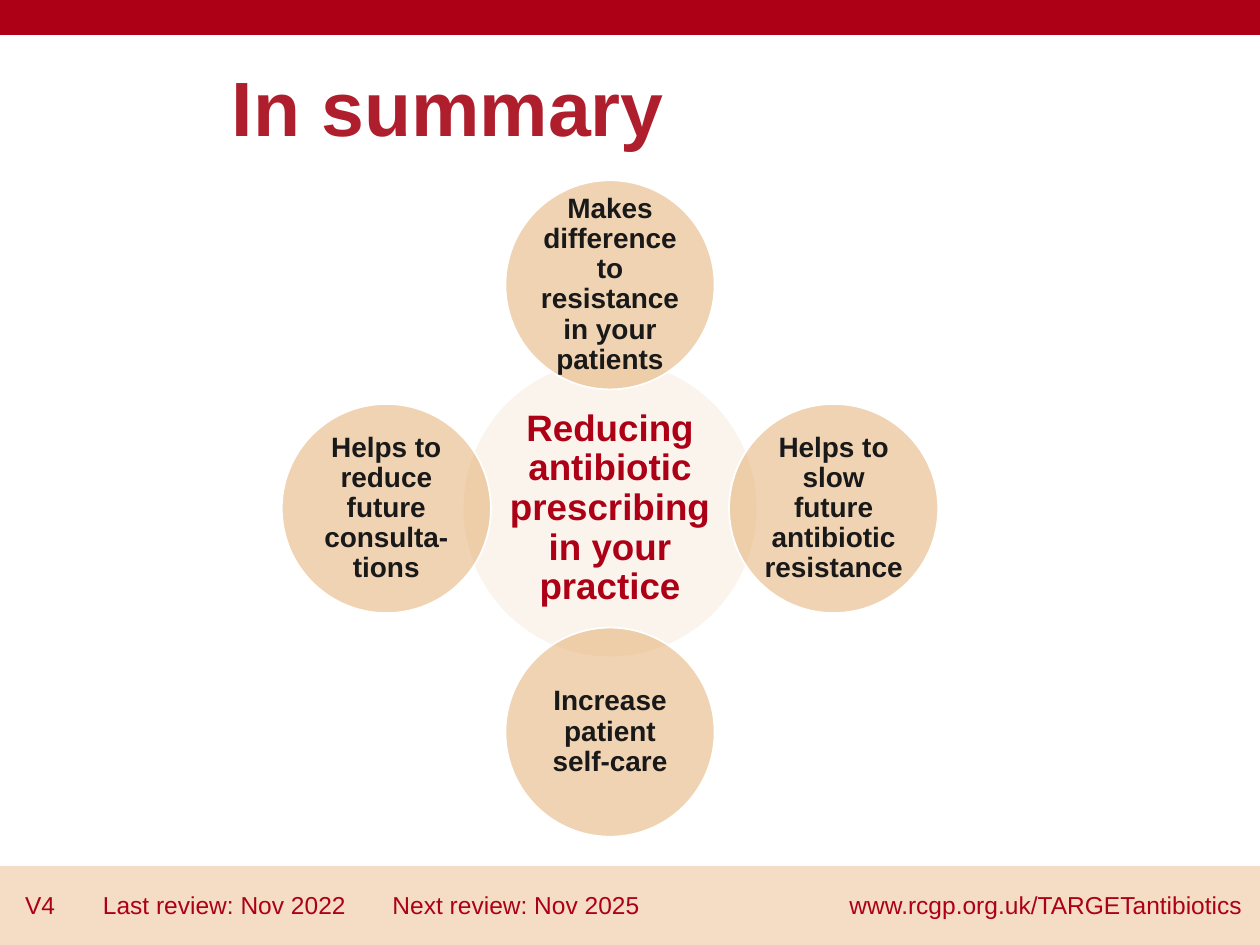
from dataclasses import dataclass

import pptx
import pptx.dml.color
import pptx.enum.shapes
import pptx.enum.text
import pptx.oxml.ns
import pptx.util
from lxml import etree

Pt = pptx.util.Pt
RGBColor = pptx.dml.color.RGBColor
Shape = pptx.enum.shapes.MSO_SHAPE
Align = pptx.enum.text.PP_ALIGN
Anchor = pptx.enum.text.MSO_ANCHOR
qn = pptx.oxml.ns.qn

RED = RGBColor(0xAD, 0x00, 0x16)
TITLE_RED = RGBColor(0xAF, 0x1E, 0x2C)
FOOTER_PEACH = RGBColor(0xF4, 0xDD, 0xC4)
HUB_CREAM = RGBColor(0xF8, 0xEB, 0xDC)
BENEFIT_TAN = RGBColor(0xE3, 0xA8, 0x67)
INK = RGBColor(0x19, 0x19, 0x19)
WHITE = RGBColor(0xFF, 0xFF, 0xFF)

# Centre of the diagram and distance from it to the outer circles
CENTRE_X, CENTRE_Y, ORBIT = 348.6, 290.6, 127.8


@dataclass(frozen=True)
class Band:
    top: float
    height: float
    colour: RGBColor


@dataclass(frozen=True)
class Circle:
    text: str
    dx: int  # offset from the centre, in orbits
    dy: int
    width: float = 119.5
    height: float = 119.5
    fill: RGBColor = BENEFIT_TAN
    colour: RGBColor = INK
    size: float = 16
    inset: float = 1.5


BANDS = [Band(495.4, 44.6, FOOTER_PEACH), Band(-0.5, 20, RED)]
CIRCLES = [
    Circle("Reducing antibiotic prescribing in your practice", 0, 0,
           168.5, 170, HUB_CREAM, RED, 21, 2),
    Circle("Makes difference to resistance in your patients", 0, -1),
    Circle("Helps to slow future antibiotic resistance", 1, 0),
    Circle("Increase patient self-care", 0, 1),
    Circle("Helps to reduce future consulta-tions", -1, 0),
]


def add_run(paragraph, text: str, size: float, colour: RGBColor,
            bold: bool = False) -> None:
    run = paragraph.add_run()
    run.text = text
    run.font.name = "Arial"
    run.font.size = Pt(size)
    run.font.bold = bold
    run.font.color.rgb = colour


def paint(shape, fill: RGBColor, line: RGBColor) -> None:
    shape.shadow.inherit = False
    shape.fill.solid()
    shape.fill.fore_color.rgb = fill
    shape.line.color.rgb = line
    shape.line.width = Pt(1)


def draw_band(slide, band: Band) -> None:
    stripe = slide.shapes.add_shape(
        Shape.RECTANGLE, Pt(0), Pt(band.top), Pt(720), Pt(band.height))
    paint(stripe, band.colour, band.colour)


def draw_circle(slide, circle: Circle) -> None:
    disc = slide.shapes.add_shape(
        Shape.OVAL,
        Pt(CENTRE_X + circle.dx * ORBIT - circle.width / 2),
        Pt(CENTRE_Y + circle.dy * ORBIT - circle.height / 2),
        Pt(circle.width), Pt(circle.height))
    paint(disc, circle.fill, WHITE)
    # Half transparent fill
    tint = disc._element.spPr.find(qn("a:solidFill"))[0]
    etree.SubElement(tint, qn("a:alpha")).set("val", "50000")

    frame = disc.text_frame
    frame.word_wrap = True
    frame.vertical_anchor = Anchor.MIDDLE
    frame.margin_left = frame.margin_right = Pt(circle.inset)
    frame.margin_top = frame.margin_bottom = Pt(circle.inset)
    label = frame.paragraphs[0]
    label.alignment = Align.CENTER
    label.line_spacing = 0.9
    add_run(label, circle.text, circle.size, circle.colour, bold=True)


def add_footer(slide, left: float, top: float, width: float, height: float,
               text: str, align: Align, tabs: tuple[float, ...] = ()) -> None:
    frame = slide.shapes.add_textbox(
        Pt(left), Pt(top), Pt(width), Pt(height)).text_frame
    frame.word_wrap = True
    frame.vertical_anchor = Anchor.MIDDLE
    note = frame.paragraphs[0]
    note.alignment = align
    if tabs:
        tab_list = etree.SubElement(note._p.get_or_add_pPr(), qn("a:tabLst"))
        for position in tabs:
            stop = etree.SubElement(tab_list, qn("a:tab"))
            stop.set("pos", str(int(Pt(position))))
            stop.set("algn", "l")
    add_run(note, text, 14, RED)


def main() -> None:
    deck = pptx.Presentation()
    deck.slide_width, deck.slide_height = Pt(720), Pt(540)
    slide = deck.slides.add_slide(deck.slide_layouts[5])

    # Bands at the top and bottom
    for band in BANDS:
        draw_band(slide, band)

    # Title
    title = slide.shapes.title
    title.left, title.top = Pt(125.3), Pt(11.5)
    title.width, title.height = Pt(545), Pt(104.4)
    title.text_frame.vertical_anchor = Anchor.MIDDLE
    heading = title.text_frame.paragraphs[0]
    heading.alignment = Align.LEFT
    heading.line_spacing = 0.9
    add_run(heading, "In summary", 44, TITLE_RED, bold=True)

    # Hub and its four benefits
    for circle in CIRCLES:
        draw_circle(slide, circle)

    # Footer
    add_footer(slide, 7.2, 502.6, 368.6, 28.8,
               "V4\tLast review: Nov 2022\tNext review: Nov 2025",
               Align.LEFT, tabs=(44.5, 210))
    add_footer(slide, 477.4, 504.7, 240.5, 24.5,
               "www.rcgp.org.uk/TARGETantibiotics", Align.CENTER)

    deck.save("out.pptx")


if __name__ == "__main__":
    main()
